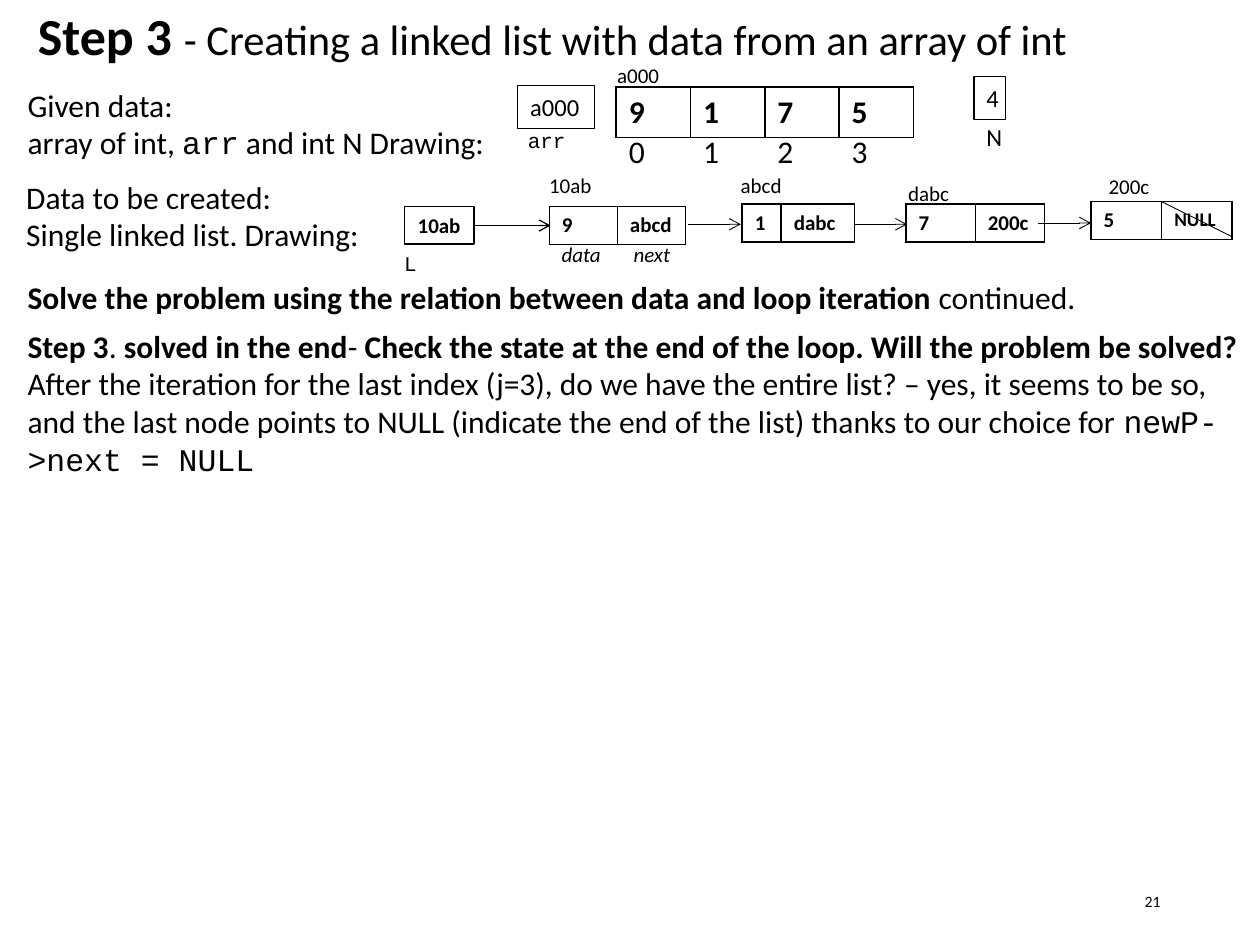
"""Build the slide on creating a linked list from an array of int."""
from dataclasses import dataclass

import pptx
import pptx.dml.color
import pptx.enum.shapes
import pptx.enum.text
import pptx.oxml
import pptx.oxml.ns
import pptx.util
from pptx.util import Inches

ALIGN = pptx.enum.text.PP_ALIGN
ANCHOR = pptx.enum.text.MSO_ANCHOR


@dataclass(frozen=True)
class Theme:
    black = pptx.dml.color.RGBColor(0, 0, 0)
    white = pptx.dml.color.RGBColor(255, 255, 255)
    body_font = "Calibri"
    code_font = "Courier New"
    title = 29.7
    subtitle = 24.3
    body = 18
    value = 14
    label = 12
    null = 11
    number = 9


THEME = Theme()


def set_font(font, size, name=THEME.body_font, bold=False, italic=False):
    font.size = pptx.util.Pt(size)
    font.name = name
    font.bold = bold
    font.italic = italic
    font.color.rgb = THEME.black


def add_runs(p, size, runs):
    """Fill a paragraph from (text, font changes) pairs."""
    set_font(p.font, size)
    for text, changes in runs:
        r = p.add_run()
        r.text = text
        for key, value in changes.items():
            setattr(r.font, key, value)


def add_text(s, box, paragraphs, size=THEME.label, wrap=False):
    sp = s.shapes.add_textbox(*map(Inches, box))
    tf = sp.text_frame
    tf.word_wrap = wrap
    for i, runs in enumerate(paragraphs):
        p = tf.add_paragraph() if i else tf.paragraphs[0]
        add_runs(p, size, runs)
    return tf


def add_label(s, text, left, top, width=0.56, size=THEME.label, italic=False):
    tf = add_text(s, (left, top, width, 0.3), [[(text, {})]], size)
    tf.paragraphs[0].font.italic = italic


def add_box(s, text, box, size, line, font=THEME.body_font, weight=0.75):
    sp = s.shapes.add_shape(pptx.enum.shapes.MSO_SHAPE.RECTANGLE, *map(Inches, box))
    sp.shadow.inherit = False
    sp.fill.background()
    sp.line.color.rgb = line
    sp.line.width = pptx.util.Pt(weight)
    tf = sp.text_frame
    tf.word_wrap = True
    tf.vertical_anchor = ANCHOR.TOP
    p = tf.paragraphs[0]
    p.text = text
    p.alignment = ALIGN.LEFT
    set_font(p.font, size, font)
    return sp


def set_borders(cell, visible):
    tc_pr = cell._tc.get_or_add_tcPr()
    fill = '<a:solidFill><a:srgbClr val="000000"/></a:solidFill>' if visible else "<a:noFill/>"
    for side in "LRTB":
        tc_pr.append(pptx.oxml.parse_xml(
            f'<a:ln{side} {pptx.oxml.ns.nsdecls("a")} w="12700">{fill}</a:ln{side}>'))


def add_row(s, values, left, top, widths, height, size, bold=True, bordered=True):
    """Add a one-row table and return it."""
    frame = s.shapes.add_table(1, len(values), Inches(left), Inches(top),
                               Inches(sum(widths)), Inches(height))
    table = frame.table
    table.first_row = table.horz_banding = False
    table.rows[0].height = Inches(height)
    for i, (value, width) in enumerate(zip(values, widths)):
        table.columns[i].width = Inches(width)
        cell = table.cell(0, i)
        set_borders(cell, bordered)
        cell.fill.background()
        p = cell.text_frame.paragraphs[0]
        p.text = value
        set_font(p.font, size, bold=bold)
    return table


def add_line(s, start, end, weight=0.5, arrow=True):
    cxn = s.shapes.add_connector(pptx.enum.shapes.MSO_CONNECTOR.STRAIGHT,
                                 *map(Inches, start + end))
    cxn.line.color.rgb = THEME.black
    cxn.line.width = pptx.util.Pt(weight)
    ns = pptx.oxml.ns.nsdecls("a")
    if arrow:
        cxn.line._get_or_add_ln().append(pptx.oxml.parse_xml(f'<a:tailEnd {ns} type="arrow"/>'))
    cxn._element.spPr.append(pptx.oxml.parse_xml(f"<a:effectLst {ns}/>"))
    return cxn


def add_title(s):
    sp = s.shapes.title
    sp.left, sp.top, sp.width, sp.height = map(Inches, (0.2, 0.02, 9.72, 0.58))
    tf = sp.text_frame
    tf.auto_size = pptx.enum.text.MSO_AUTO_SIZE.NONE
    tf.vertical_anchor = ANCHOR.MIDDLE
    p = tf.paragraphs[0]
    p.alignment = ALIGN.LEFT
    p.line_spacing = 0.9
    add_runs(p, THEME.subtitle, [
        ("Step 3 ", {"size": pptx.util.Pt(THEME.title), "bold": True}),
        ("- Creating a linked list with data from an array of int", {})])


def add_explanation(s):
    bold, code = {"bold": True}, {"name": THEME.code_font}
    add_text(s, (0.12, 0.63, 4.01, 0.71), [
        [("Given data:", {})],
        [("array of int, ", {}), ("arr", code), (" and int N Drawing:", {})]], THEME.body)
    add_text(s, (0.11, 1.36, 2.93, 0.71), [
        [("Data to be created:", {})],
        [("Single linked list. Drawing:", {})]], THEME.body)
    tf = add_text(s, (0.12, 2.16, 9.88, 1.78), [
        [("Solve the problem using the relation between data and loop iteration ", bold),
         ("continued.", {})],
        [("Step 3", bold), (". ", {}), ("solved in the end", bold), ("- ", {}),
         ("Check the state at the end of the loop. Will the problem be solved?", bold),
         (" After the iteration for the last index (j=3), do we have the entire list? – yes, "
          "it seems to be so, and the last node points to NULL (indicate the end of the list) "
          "thanks to our choice for ", {}),
         ("newP->next = NULL", code)]], THEME.body, wrap=True)
    tf.paragraphs[1].space_before = pptx.util.Pt(6)


def add_array(s):
    widths = [0.59] * 4
    add_row(s, "9175", 4.89, 0.69, widths, 0.4, THEME.body)
    add_row(s, "0123", 4.89, 1.01, widths, 0.4, THEME.body, bold=False, bordered=False)
    add_label(s, "a000", 4.8, 0.45)
    add_box(s, "arr", (4.09, 0.96, 0.51, 0.3), THEME.label, THEME.white, THEME.code_font)
    add_box(s, "a000", (4.11, 0.68, 0.61, 0.34), THEME.value, THEME.black)
    add_box(s, "4", (7.73, 0.61, 0.25, 0.34), THEME.value, THEME.black)
    add_label(s, "N", 7.73, 0.92, 0.33, THEME.value)


def add_linked_list(s):
    nodes = [
        (("9", "abcd"), 4.36, 1.64, (0.54, 0.54), ("10ab", 4.26, 1.32)),
        (("1", "dabc"), 5.89, 1.62, (0.31, 0.58), ("abcd", 5.78, 1.32)),
        (("7", "200c"), 7.19, 1.62, (0.55, 0.55), ("dabc", 7.11, 1.38)),
        (("5", "NULL"), 8.66, 1.6, (0.56, 0.56), ("200c", 8.7, 1.33)),
    ]
    for values, left, top, widths, address in nodes:
        table = add_row(s, values, left, top, widths, 0.3, THEME.label)
        add_label(s, *address)
    table.cell(0, 1).text_frame.paragraphs[0].font.size = pptx.util.Pt(THEME.null)
    add_line(s, (9.22, 1.6), (9.78, 1.88), arrow=False)
    for left, y in ((5.46, 1.78), (6.78, 1.78), (8.24, 1.77)):
        add_line(s, (left, y), (left + 0.42, y))
    add_label(s, "data", 4.36, 1.87, italic=True)
    add_label(s, "next", 4.93, 1.87, italic=True)

    add_box(s, "L", (3.11, 1.94, 0.33, 0.3), THEME.label, THEME.white, THEME.code_font)
    head = add_box(s, "10ab", (3.21, 1.64, 0.55, 0.3), THEME.label, THEME.black, weight=1)
    head.fill.solid()
    head.fill.fore_color.rgb = THEME.white
    head.text_frame.vertical_anchor = ANCHOR.MIDDLE
    p = head.text_frame.paragraphs[0]
    p.alignment = ALIGN.CENTER
    p.font.bold = True
    add_line(s, (3.76, 1.79), (4.37, 1.79), 0.75).begin_connect(head, 3)


def main():
    prs = pptx.Presentation()
    prs.slide_width, prs.slide_height = Inches(10), Inches(7.5)
    s = prs.slides.add_slide(prs.slide_layouts[5])
    add_title(s)
    add_explanation(s)
    add_linked_list(s)
    add_array(s)
    tf = add_text(s, (7.06, 6.95, 2.25, 0.4), [[("21", {})]], THEME.number, wrap=True)
    tf.vertical_anchor = ANCHOR.MIDDLE
    tf.paragraphs[0].alignment = ALIGN.RIGHT
    prs.save("out.pptx")


if __name__ == "__main__":
    main()
